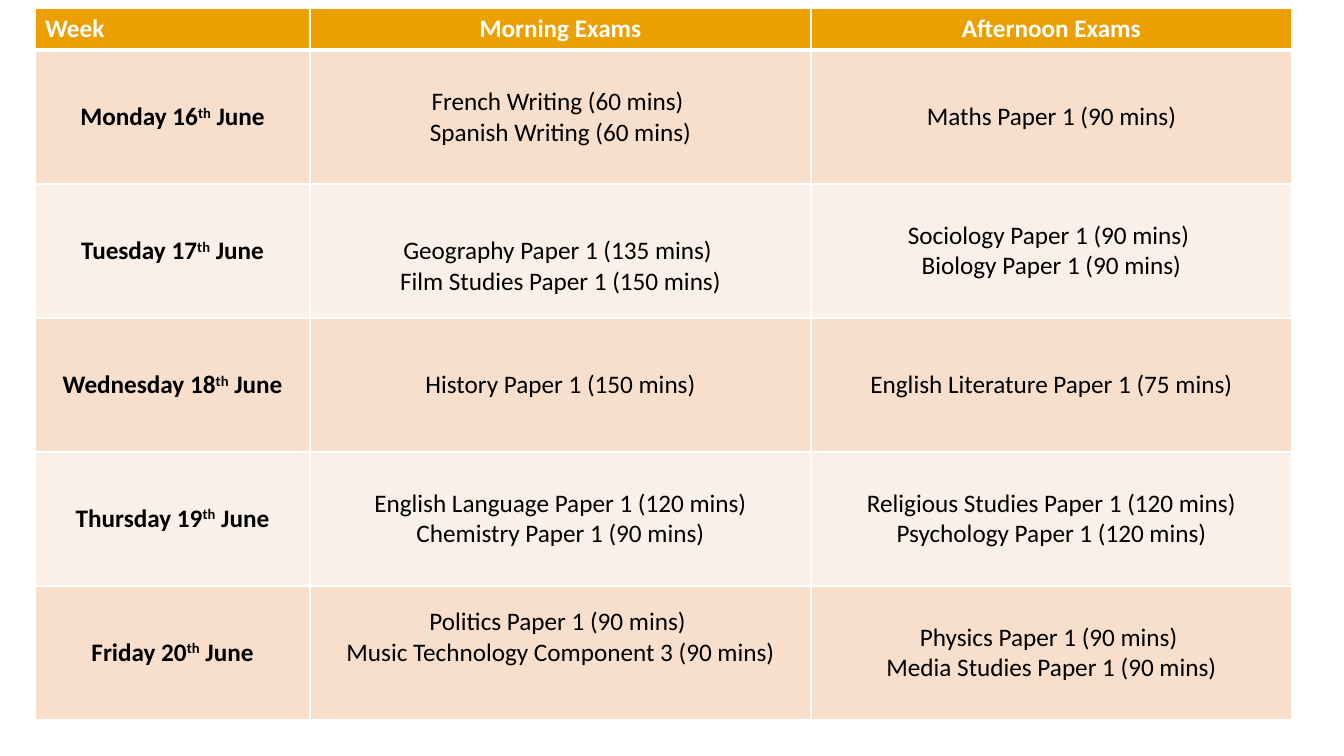
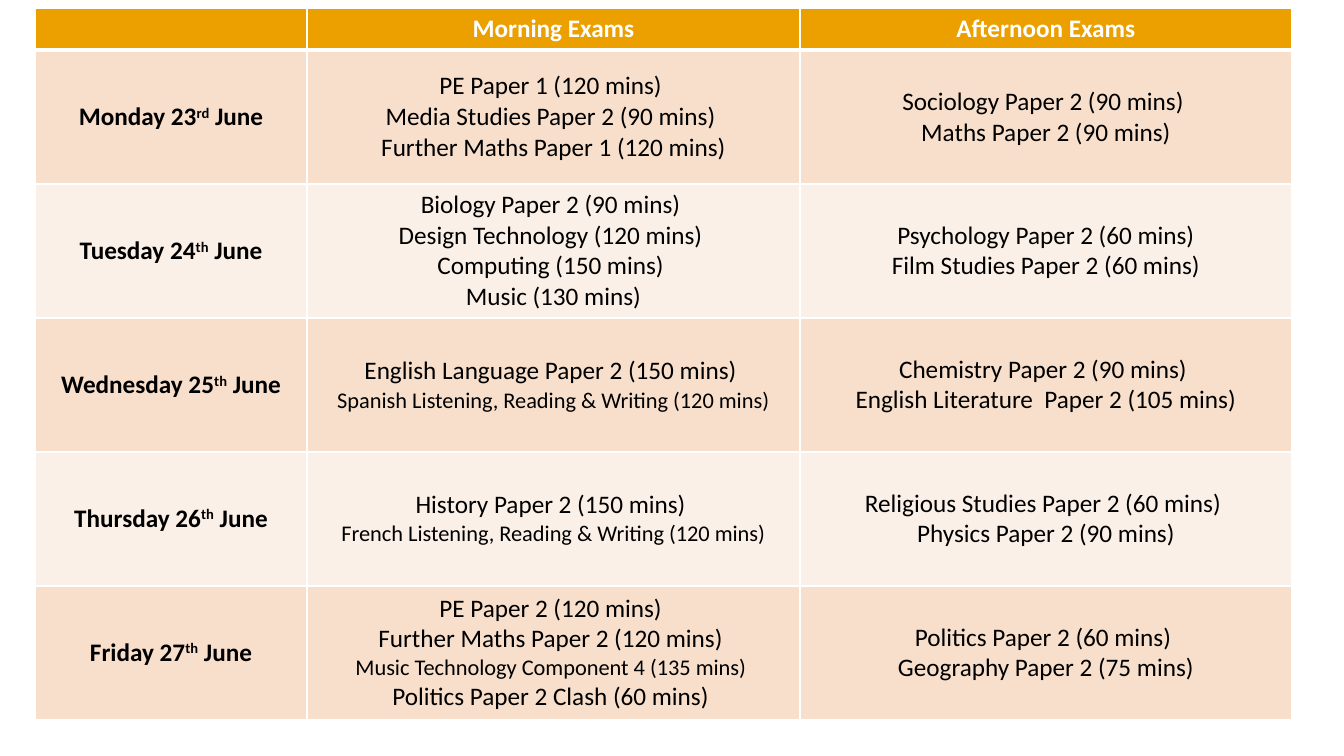
from lxml import etree
from pptx import Presentation
from pptx.dml.color import RGBColor
from pptx.enum.text import MSO_ANCHOR, PP_ALIGN
from pptx.oxml.ns import qn
from pptx.util import Emu, Pt

CENTER, LEFT = PP_ALIGN.CENTER, PP_ALIGN.LEFT
MIDDLE, TOP = MSO_ANCHOR.MIDDLE, MSO_ANCHOR.TOP

# Shared look
FONT, SIZE, SMALL = "Calibri", 18, 16
WHITE, BLACK, ORANGE = "FFFFFF", "000000", "EBA000"
BANDS = ("F7DFCC", "FBF0E7")
SLIDE_W, SLIDE_H = 1344, 756
TABLE_X, TABLE_Y = 35, 8
HEAD_H, ROW_H, LINE_H, MARGIN = 42, 134, 31, 5

# Each row: day, ordinal, morning exams, afternoon exams
WEEKS = [
    {
        "head": ("Week", "Morning Exams", "Afternoon Exams"),
        "widths": (275, 501, 481),
        "rows": [
            ("Monday 16", "th",
             ["French Writing (60 mins) ", "Spanish Writing (60 mins)"],
             ["Maths Paper 1 (90 mins)"]),
            ("Tuesday 17", "th",
             ["Geography Paper 1 (135 mins) ", "Film Studies Paper 1 (150 mins)"],
             ["Sociology Paper 1 (90 mins) ", "Biology Paper 1 (90 mins)"]),
            ("Wednesday 18", "th",
             ["History Paper 1 (150 mins)"],
             ["English Literature Paper 1 (75 mins)"]),
            ("Thursday 19", "th",
             ["English Language Paper 1 (120 mins)", "Chemistry Paper 1 (90 mins)"],
             ["Religious Studies Paper 1 (120 mins) Psychology Paper 1 (120 mins)"]),
            ("Friday 20", "th",
             ["Politics Paper 1 (90 mins) ", "Music Technology Component 3 (90 mins)"],
             ["Physics Paper 1 (90 mins) ", "Media Studies Paper 1 (90 mins)"]),
        ],
        # Cells set one line lower or higher: (row, column) -> side to pad
        "pads": {(2, 1): "margin_top", (5, 1): "margin_bottom"},
    },
    {
        "head": ("", "Morning Exams", "Afternoon Exams"),
        "widths": (272, 493, 492),
        "rows": [
            ("Monday 23", "rd",
             ["PE Paper 1 (120 mins) ", "Media Studies Paper 2 (90 mins) ",
              "Further Maths Paper 1 (120 mins)"],
             ["Sociology Paper 2 (90 mins) ", "Maths Paper 2 (90 mins)"]),
            ("Tuesday 24", "th",
             ["Biology Paper 2 (90 mins) ", "Design Technology (120 mins) ",
              "Computing (150 mins) ", "Music (130 mins)"],
             ["Psychology Paper 2 (60 mins)", "Film Studies Paper 2 (60 mins)"]),
            ("Wednesday 25", "th",
             ["English Language Paper 2 (150 mins) ",
              ("Spanish Listening, Reading & Writing (120 mins)", SMALL)],
             ["Chemistry Paper 2 (90 mins) ", "English Literature  Paper 2 (105 mins)"]),
            ("Thursday 26", "th",
             ["History Paper 2 (150 mins) ",
              ("French Listening, Reading & Writing (120 mins)", SMALL)],
             ["Religious Studies Paper 2 (60 mins) ", "Physics Paper 2 (90 mins)"]),
            ("Friday 27", "th",
             ["PE Paper 2 (120 mins) ", "Further Maths Paper 2 (120 mins) ",
              ("Music Technology Component 4 (135 mins) ", SMALL),
              "Politics Paper 2 Clash (60 mins) "],
             ["Politics Paper 2 (60 mins) ", "Geography Paper 2 (75 mins)"]),
        ],
        "pads": {},
    },
]


def px(n):
    return Emu(round(n * 914400 / 100.8))


def rgb(value):
    return RGBColor.from_string(value)


def add_run(p, text, color=BLACK, size=SIZE, bold=False, raised=False):
    r = p.add_run()
    r.text = text
    r.font.name, r.font.size, r.font.bold = FONT, Pt(size), bold
    r.font.color.rgb = rgb(color)
    if raised:
        r.font._element.set("baseline", "30000")


def style_cell(cell, fill, anchor, top, bottom):
    """White borders in points, then the fill."""
    tc_pr = cell._tc.get_or_add_tcPr()
    for tag, width in (("lnL", 1), ("lnR", 1), ("lnT", top), ("lnB", bottom)):
        ln = etree.SubElement(tc_pr, qn(f"a:{tag}"), w=str(Pt(width)))
        solid = etree.SubElement(ln, qn("a:solidFill"))
        etree.SubElement(solid, qn("a:srgbClr"), val=WHITE)
    cell.fill.solid()
    cell.fill.fore_color.rgb = rgb(fill)
    cell.vertical_anchor = anchor


def add_exams(cell, exams):
    tf = cell.text_frame
    for i, exam in enumerate(exams):
        text, size = exam if isinstance(exam, tuple) else (exam, SIZE)
        p = tf.add_paragraph() if i else tf.paragraphs[0]
        p.alignment = CENTER
        add_run(p, text, size=size)


def add_timetable(s, week):
    widths, rows = week["widths"], week["rows"]
    height = HEAD_H + ROW_H * len(rows)
    table = s.shapes.add_table(len(rows) + 1, len(widths), px(TABLE_X), px(TABLE_Y),
                               px(sum(widths)), px(height)).table
    for column, width in zip(table.columns, widths):
        column.width = px(width)
    for i, row in enumerate(table.rows):
        row.height = px(ROW_H if i else HEAD_H)

    # Header row
    for c, label in enumerate(week["head"]):
        cell = table.cell(0, c)
        style_cell(cell, ORANGE, TOP, 1, 3)
        p = cell.text_frame.paragraphs[0]
        p.alignment = CENTER if c else LEFT
        if label:
            add_run(p, label, WHITE, bold=True)

    # Day rows
    for i, (day, ordinal, morning, afternoon) in enumerate(rows, 1):
        for c in range(len(widths)):
            style_cell(table.cell(i, c), BANDS[(i - 1) % 2], MIDDLE, 3 if i == 1 else 1, 1)
        p = table.cell(i, 0).text_frame.paragraphs[0]
        p.alignment = CENTER
        add_run(p, day, bold=True)
        add_run(p, ordinal, bold=True, raised=True)
        add_run(p, " June", bold=True)
        add_exams(table.cell(i, 1), morning)
        add_exams(table.cell(i, 2), afternoon)

    for (i, c), side in week["pads"].items():
        setattr(table.cell(i, c), side, px(MARGIN + LINE_H))


def main():
    prs = Presentation()
    prs.slide_width, prs.slide_height = px(SLIDE_W), px(SLIDE_H)
    blank = prs.slide_layouts[6]
    for week in WEEKS:
        add_timetable(prs.slides.add_slide(blank), week)
    prs.save("out.pptx")


if __name__ == "__main__":
    main()
